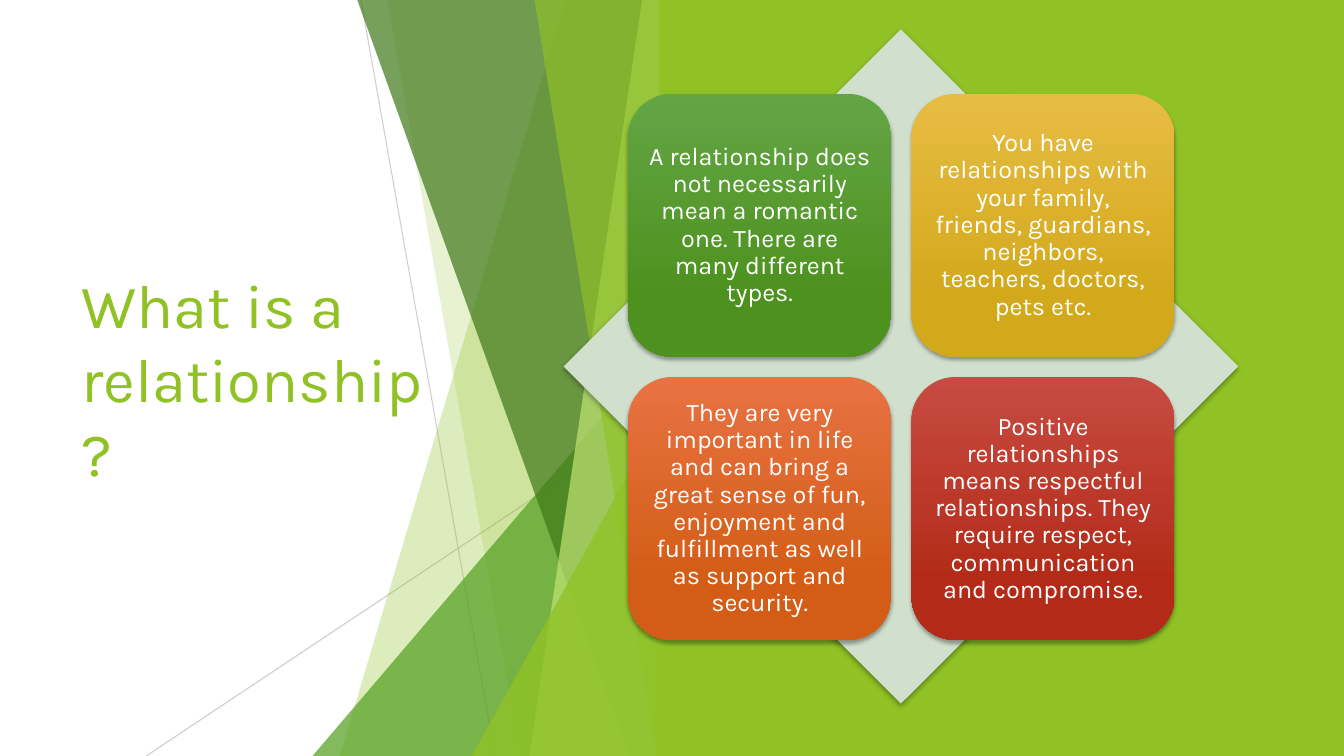
from lxml import etree
from pptx import Presentation
from pptx.dml.color import RGBColor
from pptx.enum import shapes, text
from pptx.oxml.ns import qn
from pptx.util import Inches, Pt

GREEN = "90C226"
SHAPE = shapes.MSO_SHAPE
EDGE = 6.66  # shared right edge of the facets
TOP, BASE = -0.01, 7.5

# Facets: top left, top right, bottom right, bottom left, colour, opacity
BACK = [
    (5.61, EDGE, EDGE, 3.37, GREEN, 30),
    (3.84, EDGE, EDGE, 5.16, GREEN, 20),
]
FRONT = [
    (3.54, EDGE, EDGE, 6.24, "3F7819", 70),
    (6.37, EDGE, EDGE, 5.25, "C0E474", 70),
    (5.3, EDGE, EDGE, 6.51, GREEN, 65),
]

# Cards, row by row: text, top colour, lower colour
CARDS = [
    ("A relationship does not necessarily mean a romantic one. "
     "There are many different types.", "63A545", "4D921E"),
    ("You have relationships with your family, friends, guardians, "
     "neighbors, teachers, doctors, pets etc.", "E7BC43", "D2A91B"),
    ("They are very important in life and can bring a great sense of fun, "
     "enjoyment and fulfillment as well as support and security.",
     "E87242", "D35D16"),
    ("Positive relationships means respectful relationships. "
     "They require respect, communication and compromise.",
     "C74B42", "B32B18"),
]


def color(code):
    return RGBColor.from_string(code)


def fade(shape, pct):
    """Set the opacity of the first colour of a shape or line."""
    tone = shape._element.spPr.find(".//" + qn("a:srgbClr"))
    etree.SubElement(tone, qn("a:alpha"), val=str(pct * 1000))


def paint(shape, code, pct=100):
    shape.shadow.inherit = False
    shape.line.fill.background()
    shape.fill.solid()
    shape.fill.fore_color.rgb = color(code)
    if pct < 100:
        fade(shape, pct)


def block(slide, kind, x, y, w, h, code, pct=100):
    shape = slide.shapes.add_shape(
        kind, Inches(x), Inches(y), Inches(w), Inches(h))
    paint(shape, code, pct)
    return shape


def facet(slide, left, right, low_right, low_left, code, pct):
    points = [(right, TOP), (low_right, BASE), (low_left, BASE)]
    pen = slide.shapes.build_freeform(Inches(left), Inches(TOP))
    pen.add_line_segments([(Inches(x), Inches(y)) for x, y in points])
    paint(pen.convert_to_shape(), code, pct)


def wedge(slide, x, y, code, pct):
    """Draw a triangle with its tip at the upper right."""
    shape = block(slide, SHAPE.ISOSCELES_TRIANGLE, x, y,
                  EDGE - x, BASE - y, code, pct)
    shape.adjustments[0] = 1


def rule(slide, x1, y1, x2, y2, pct):
    line = slide.shapes.add_connector(
        shapes.MSO_CONNECTOR.STRAIGHT,
        Inches(x1), Inches(y1), Inches(x2), Inches(y2))
    line.line.color.rgb = color("BFBFBF")
    line.line.width = Pt(0.75)
    fade(line, pct)
    etree.SubElement(line._element.spPr, qn("a:effectLst"))


def shade(shape):
    """Give a shape a soft shadow below it."""
    effects = shape._element.spPr.find(qn("a:effectLst"))
    drop = etree.SubElement(
        effects, qn("a:outerShdw"), blurRad=str(Pt(3)), dist=str(Pt(2)),
        dir="5400000", algn="ctr", rotWithShape="0")
    tone = etree.SubElement(drop, qn("a:srgbClr"), val="000000")
    etree.SubElement(tone, qn("a:alpha"), val="35000")


def write(shape, words, size, code):
    frame = shape.text_frame
    frame.text = words
    frame.word_wrap = True
    frame.vertical_anchor = text.MSO_ANCHOR.MIDDLE
    para = frame.paragraphs[0]
    font = para.runs[0].font
    font.name, font.size = "Karla", Pt(size)
    font.color.rgb = color(code)
    return para


def card(slide, x, y, side, words, light, dark):
    shape = block(slide, SHAPE.ROUNDED_RECTANGLE, x, y, side, side, light)
    shape.fill.gradient()
    shape.fill.gradient_angle = 270
    for stop, code, place in zip(
            shape.fill.gradient_stops, (light, dark), (0, 0.78)):
        stop.color.rgb = color(code)
        stop.position = place
    shade(shape)
    para = write(shape, words, 18, "FFFFFF")
    para.alignment = text.PP_ALIGN.CENTER
    para.line_spacing = 0.9
    frame = shape.text_frame
    frame.margin_left = frame.margin_right = Inches(0.07)
    frame.margin_top = frame.margin_bottom = Inches(0.07)


def main():
    deck = Presentation()
    deck.slide_width, deck.slide_height = Inches(13.33), Inches(7.5)
    slide = deck.slides.add_slide(deck.slide_layouts[6])

    # Title
    title = slide.shapes.add_textbox(
        Inches(0.71), Inches(1.51), Inches(3.88), Inches(4.48))
    write(title, "What is a relationship?", 44, GREEN)

    # Faceted band
    rule(slide, 3.58, 0, 4.91, 7.5, 75)
    rule(slide, EDGE, 4.03, 1.45, 7.5, 80)
    for item in BACK:
        facet(slide, *item)
    wedge(slide, 3.1, 3.33, "54A021", 72)
    for item in FRONT:
        facet(slide, *item)
    wedge(slide, 4.68, 3.93, GREEN, 80)

    # Green panel
    block(slide, SHAPE.RECTANGLE, 6.54, 0, 6.79, 7.5, GREEN)

    # Diamond with a two by two grid of cards
    shade(block(slide, SHAPE.DIAMOND, 5.59, 0.29, 6.69, 6.69, "D1DFCD"))
    side, step = 2.61, 2.81
    for i, item in enumerate(CARDS):
        row, col = divmod(i, 2)
        card(slide, 6.23 + col * step, 0.93 + row * step, side, *item)

    deck.save("out.pptx")


if __name__ == "__main__":
    main()
